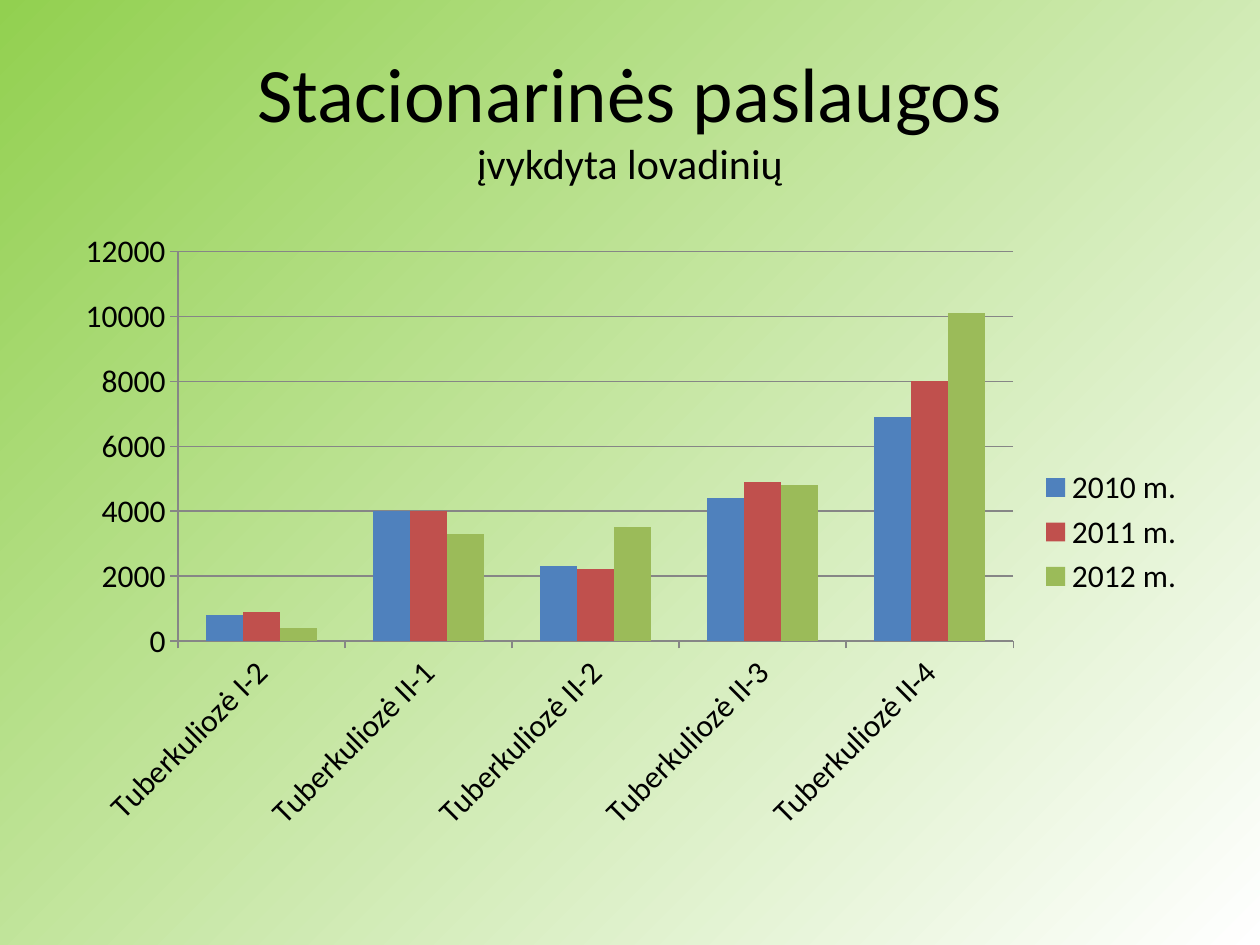
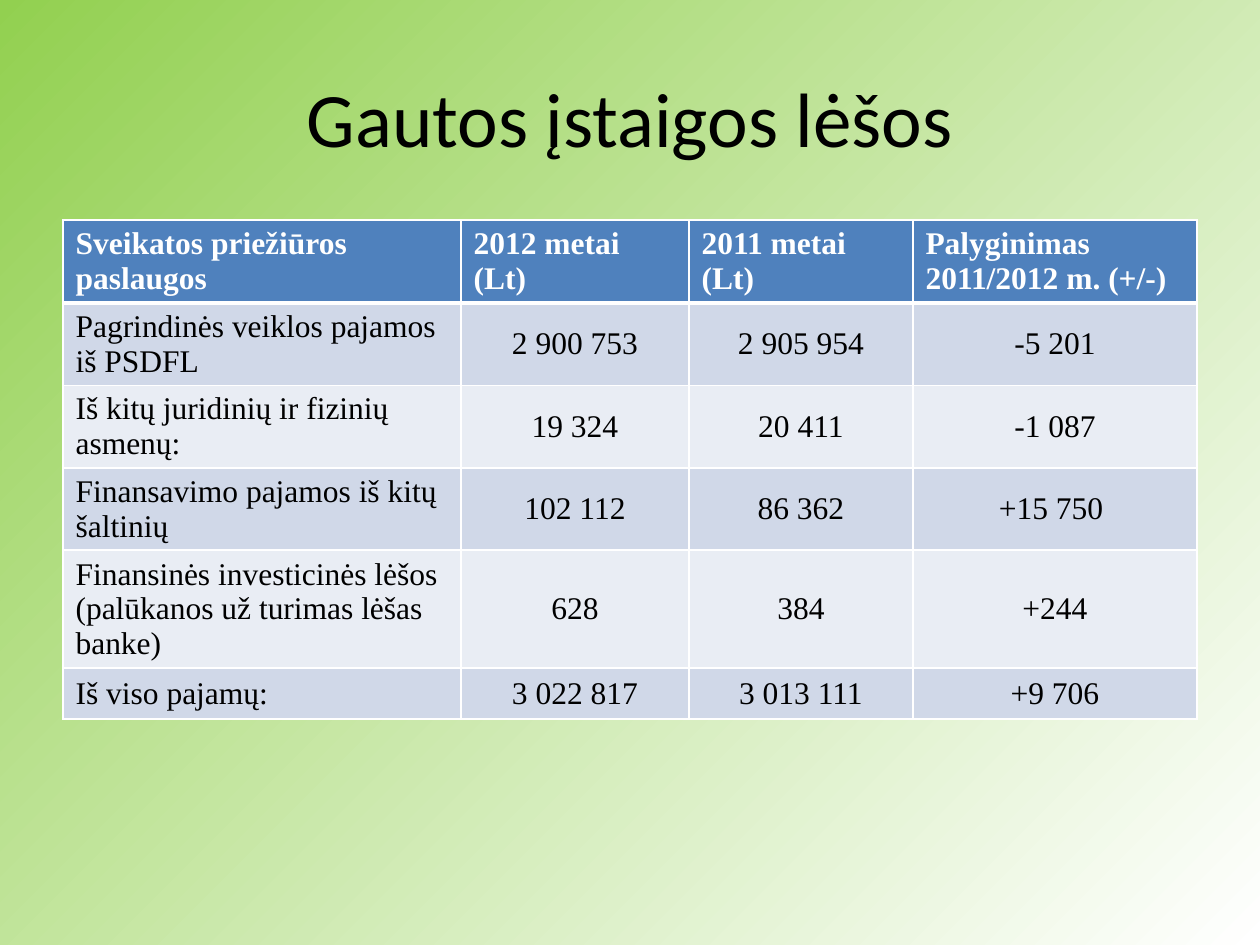
import pptx
import pptx.chart.data
import pptx.dml.color
import pptx.enum.chart
import pptx.enum.text
import pptx.oxml
import pptx.oxml.ns
import pptx.util

COLOURS = {
    "green": "92D050", "white": "FFFFFF", "black": "000000", "axis": "868686",
    "blue": "4F81BD", "red": "C0504D", "olive": "9BBB59",
    "band_dark": "D0D8E8", "band_light": "E9EDF4",
}
PX = pptx.util.Inches(1) / 126
LEFT, WIDTH = 63, 1134
TITLE_TOP, TITLE_HEIGHT = 38, 158
BODY_TOP, CHART_HEIGHT = 220, 624

SERVICES_TITLE = [("Stacionarinės paslaugos", 44), ("įvykdyta lovadinių", 24)]
DEPARTMENTS = [f"Tuberkuliozė {ward}" for ward in ("I-2", "II-1", "II-2", "II-3", "II-4")]
BED_DAYS = [
    ("2010 m.", "blue", (800, 4000, 2300, 4400, 6900)),
    ("2011 m.", "red", (900, 4000, 2200, 4900, 8000)),
    ("2012 m.", "olive", (400, 3300, 3500, 4800, 10100)),
]

FUNDS_TITLE = [("Gautos įstaigos lėšos", 44)]
FUNDS_COLUMNS = (398, 228, 224, 284)
FUNDS_HEIGHTS = (83, 82, 82, 82, 118, 51)
FUNDS = [
    ("Sveikatos priežiūros paslaugos", "2012 metai (Lt)", "2011 metai (Lt)",
     "Palyginimas 2011/2012 m. (+/-)"),
    ("Pagrindinės veiklos pajamos iš PSDFL", "2 900 753", "2 905 954", "-5 201"),
    ("Iš kitų juridinių ir fizinių asmenų:", "19 324", "20 411", "-1 087"),
    ("Finansavimo pajamos iš kitų šaltinių", "102 112", "86 362", "+15 750 "),
    ("Finansinės investicinės lėšos (palūkanos už turimas lėšas banke)",
     "628", "384", "+244"),
    ("Iš viso pajamų:", "3 022 817", "3 013 111", "+9 706"),
]


def px(length):
    return pptx.util.Emu(round(length * PX))


def colour(name):
    return pptx.dml.color.RGBColor.from_string(COLOURS[name])


def set_font(font, name, size, ink="black", bold=False):
    font.name, font.size, font.bold = name, pptx.util.Pt(size), bold
    font.color.rgb = colour(ink)


def paint_background(master):
    fill = master.background.fill
    fill.gradient()
    fill.gradient_angle = 315
    for stop, name in zip(fill.gradient_stops, ("green", "white")):
        stop.color.rgb = colour(name)


def add_page(deck, title_lines):
    page = deck.slides.add_slide(deck.slide_layouts[5])
    title = page.shapes.title
    title.left, title.top = px(LEFT), px(TITLE_TOP)
    title.width, title.height = px(WIDTH), px(TITLE_HEIGHT)
    title.text_frame.vertical_anchor = pptx.enum.text.MSO_ANCHOR.MIDDLE
    para = title.text_frame.paragraphs[0]
    para.alignment = pptx.enum.text.PP_ALIGN.CENTER
    set_font(para.font, "Calibri", title_lines[0][1])
    for index, (text, size) in enumerate(title_lines):
        if index:
            para.add_line_break()
        span = para.add_run()
        span.text = text
        span.font.size = pptx.util.Pt(size)
    return page


def add_bed_days_chart(page):
    data = pptx.chart.data.CategoryChartData()
    data.categories = DEPARTMENTS
    for year, _, values in BED_DAYS:
        data.add_series(year, values)
    chart = page.shapes.add_chart(
        pptx.enum.chart.XL_CHART_TYPE.COLUMN_CLUSTERED,
        px(LEFT), px(BODY_TOP), px(WIDTH), px(CHART_HEIGHT), data).chart
    chart.has_title = False
    set_font(chart.font, "Calibri", 18)
    chart.has_legend = True
    chart.legend.position = pptx.enum.chart.XL_LEGEND_POSITION.RIGHT
    chart.legend.include_in_layout = False
    set_font(chart.legend.font, "Calibri", 18)

    plot = chart.plots[0]
    plot.gap_width, plot.overlap, plot.vary_by_categories = 150, 0, False
    for series, (_, fill_name, _) in zip(plot.series, BED_DAYS):
        series.invert_if_negative = False
        series.format.fill.solid()
        series.format.fill.fore_color.rgb = colour(fill_name)

    values, departments = chart.value_axis, chart.category_axis
    values.minimum_scale, values.maximum_scale, values.major_unit = 0, 12000, 2000
    values.has_major_gridlines = True
    for axis in (values, departments):
        axis.major_tick_mark = pptx.enum.chart.XL_TICK_MARK.OUTSIDE
        set_font(axis.tick_labels.font, "Calibri", 18)
    for line in (values.format.line, departments.format.line,
                 values.major_gridlines.format.line):
        line.color.rgb = colour("axis")
        line.width = pptx.util.Pt(0.75)
    departments._element.txPr.find(pptx.oxml.ns.qn("a:bodyPr")).set("rot", "-2700000")


def set_borders(cell, row):
    widths = {"L": 1, "R": 1, "T": 3 if row == 1 else 1, "B": 3 if row == 0 else 1}
    properties = cell._tc.get_or_add_tcPr()
    for index, (side, width) in enumerate(widths.items()):
        properties.insert(index, pptx.oxml.parse_xml(
            f'<a:ln{side} {pptx.oxml.ns.nsdecls("a")} w="{pptx.util.Pt(width)}">'
            f'<a:solidFill><a:srgbClr val="{COLOURS["white"]}"/></a:solidFill></a:ln{side}>'))


def fill_cell(cell, text, row, column):
    header = row == 0
    cell.text = text
    para = cell.text_frame.paragraphs[0]
    set_font(para.font, "Times New Roman", 18, "white" if header else "black", header)
    if not header:
        cell.vertical_anchor = pptx.enum.text.MSO_ANCHOR.MIDDLE
        if column:
            para.alignment = pptx.enum.text.PP_ALIGN.CENTER
    cell.fill.solid()
    band = "band_dark" if row % 2 else "band_light"
    cell.fill.fore_color.rgb = colour("blue" if header else band)
    set_borders(cell, row)


def add_funds_table(page):
    table = page.shapes.add_table(
        len(FUNDS), len(FUNDS_COLUMNS), px(LEFT), px(BODY_TOP),
        px(WIDTH), px(sum(FUNDS_HEIGHTS))).table
    for column, width in zip(table.columns, FUNDS_COLUMNS):
        column.width = px(width)
    for row, (texts, height) in enumerate(zip(FUNDS, FUNDS_HEIGHTS)):
        table.rows[row].height = px(height)
        for column, text in enumerate(texts):
            fill_cell(table.cell(row, column), text, row, column)


def main():
    """Build the bed-day chart and the received funds table."""
    deck = pptx.Presentation()
    deck.slide_width, deck.slide_height = px(1260), px(945)
    paint_background(deck.slide_master)
    add_bed_days_chart(add_page(deck, SERVICES_TITLE))
    add_funds_table(add_page(deck, FUNDS_TITLE))
    deck.save("out.pptx")


if __name__ == "__main__":
    main()
